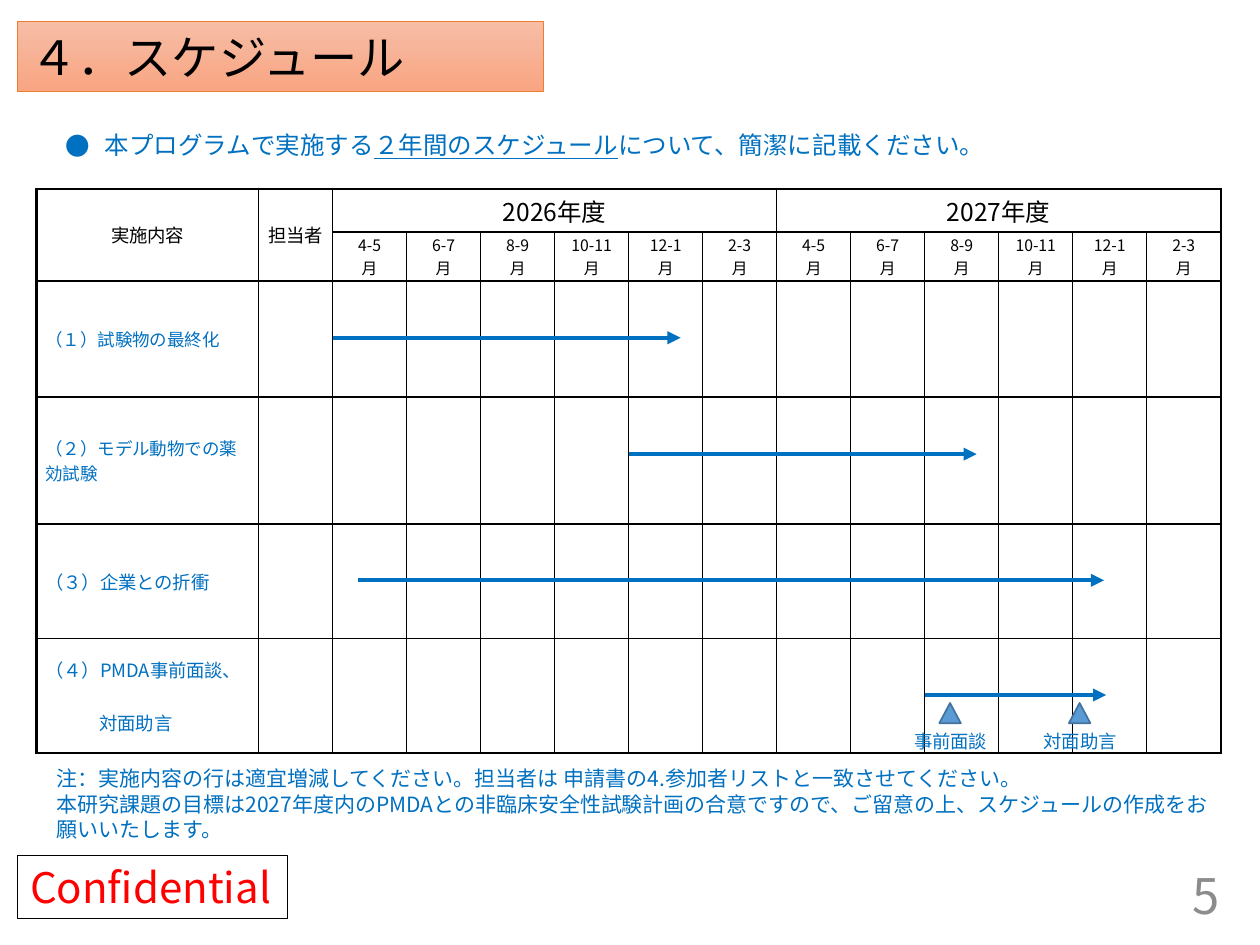
from itertools import accumulate

from lxml import etree
from pptx import Presentation
from pptx import util as u
from pptx.dml.color import RGBColor
from pptx.enum import shapes, text
from pptx.oxml import ns

# Content
TITLE = "４．スケジュール"
LEAD = [("本プログラムで実施する", False), ("２年間のスケジュール", True),
        ("について、簡潔に記載ください。", False)]
HEADS = ["実施内容", "担当者"]
YEARS = ["2026年度", "2027年度"]
MONTHS = ["4-5", "6-7", "8-9", "10-11", "12-1", "2-3"]
# Lines of each task, text size, arrow start and end in month columns, height in row
TASKS = [
    (["（１）試験物の最終化"], 10, 0, 4.7, 0.49),
    (["（２）モデル動物での薬効試験"], 10, 4, 8.7, 0.45),
    (["（３）企業との折衝"], 10.5, 0.34, 10.42, 0.49),
    (["（４）PMDA事前面談、", "対面助言"], 10.5, 8, 10.45, 0.49),
]
MILESTONES = [("事前面談", 8.35), ("対面助言", 10.1)]
NOTES = [
    "注：実施内容の行は適宜増減してください。担当者は 申請書の4.参加者リストと一致させてください。",
    "本研究課題の目標は2027年度内のPMDAとの非臨床安全性試験計画の合意ですので、"
    "ご留意の上、スケジュールの作成をお願いいたします。",
]

FONT = "Noto Sans CJK JP"
C = {"black": "000000", "blue": "0070C0", "red": "FF0000", "grey": "8C8C8C",
     "peach": "F7BDA5", "salmon": "F8A582", "orange": "ED7D31",
     "marker": "5B9BD5", "marker_edge": "43739E"}
AL, MID = text.PP_ALIGN, text.MSO_ANCHOR.MIDDLE

# Grid: the task column takes three units, every other column one
LEFT, TOP, WIDTH = 0.29, 1.5, 9.4
UNITS = [3] + [1] * 13
UNIT = WIDTH / sum(UNITS)
ROWS = [0.34, 0.39, 0.92, 1.01, 0.91, 0.91]
ROW_TOPS = list(accumulate(ROWS, initial=TOP))


def rgb(name):
    return RGBColor.from_string(C[name])


def month_x(n):
    return LEFT + (4 + n) * UNIT


def add_run(p, s, size=10.5, color="blue", underline=False):
    r = p.add_run()
    r.text = s
    r.font.size, r.font.name = u.Pt(size), FONT
    r.font.color.rgb = rgb(color)
    if underline:
        r.font.underline = True
    ea = etree.SubElement(r.font._element, ns.qn("a:ea"))
    ea.set("typeface", FONT)


def write(tf, lines, align=AL.LEFT, anchor=MID, wrap=True, pitch=None, **fmt):
    tf.word_wrap, tf.vertical_anchor = wrap, anchor
    for i, line in enumerate(lines):
        p = tf.paragraphs[0] if i == 0 else tf.add_paragraph()
        p.alignment = align
        if pitch:
            p.line_spacing = u.Pt(pitch)
        add_run(p, line, **fmt)


def place(sp, *box):
    sp.left, sp.top, sp.width, sp.height = map(u.Inches, box)


def add_text(s, box, lines, **fmt):
    sp = s.shapes.add_textbox(*map(u.Inches, box))
    write(sp.text_frame, lines, **fmt)
    return sp


def add_arrow(s, x1, x2, y):
    c = s.shapes.add_connector(shapes.MSO_CONNECTOR.STRAIGHT,
                               *map(u.Inches, (x1, y, x2, y)))
    c.line.color.rgb, c.line.width = rgb("blue"), u.Pt(2.5)
    spPr = c.element.spPr
    etree.SubElement(spPr.find(ns.qn("a:ln")), ns.qn("a:tailEnd")).set("type", "triangle")
    etree.SubElement(spPr, ns.qn("a:effectLst"))


def style_cell(cell, row, col):
    """Rule the cell, thicker at the table's edge and under the header."""
    heavy = {"L": col == 0, "R": col == len(UNITS) - 1,
             "T": row in (0, 2), "B": row in (1, len(ROWS) - 1)}
    tcPr = cell._tc.get_or_add_tcPr()
    for side, thick in heavy.items():
        ln = etree.SubElement(tcPr, ns.qn("a:ln" + side))
        ln.set("w", str(u.Pt(1.5 if thick else 1)))
        fill = etree.SubElement(ln, ns.qn("a:solidFill"))
        etree.SubElement(fill, ns.qn("a:srgbClr")).set("val", C["black"])
    cell.fill.background()
    cell.margin_left = cell.margin_right = u.Inches(0.07)
    cell.margin_top = cell.margin_bottom = 0


def add_schedule(s):
    box = map(u.Inches, (LEFT, TOP, WIDTH, sum(ROWS)))
    tbl = s.shapes.add_table(len(ROWS), len(UNITS), *box).table
    tbl.first_row = tbl.horz_banding = False
    for column, n in zip(tbl.columns, UNITS):
        column.width = u.Inches(n * UNIT)
    for row, h in zip(tbl.rows, ROWS):
        row.height = u.Inches(h)
    for i in range(len(ROWS)):
        for j in range(len(UNITS)):
            style_cell(tbl.cell(i, j), i, j)

    def fill(row, col, lines, align=AL.CENTER, color="black", **fmt):
        cell = tbl.cell(row, col)
        cell.vertical_anchor = MID
        for i, line in enumerate(lines):
            tf = cell.text_frame
            p = tf.paragraphs[0] if i == 0 else tf.add_paragraph()
            p.alignment = align
            add_run(p, line, color=color, **fmt)
        return cell

    for col, head in enumerate(HEADS):
        tbl.cell(0, col).merge(tbl.cell(1, col))
        fill(0, col, [head])
    for k, year in enumerate(YEARS):
        first = len(HEADS) + k * len(MONTHS)
        tbl.cell(0, first).merge(tbl.cell(0, first + len(MONTHS) - 1))
        fill(0, first, [year], size=14)
        for m, month in enumerate(MONTHS):
            fill(1, first + m, [month, "月"], size=9)
    for row, (lines, size, *_) in enumerate(TASKS, 2):
        cell = fill(row, 0, lines, align=AL.LEFT, color="blue", size=size)
        for p in cell.text_frame.paragraphs[1:]:
            p.space_before = u.Pt(15)
            p._p.get_or_add_pPr().set("marL", str(u.Inches(0.43)))


prs = Presentation()
prs.slide_width, prs.slide_height = u.Inches(10), u.Inches(7.5)
s = prs.slides.add_slide(prs.slide_layouts[1])

# Title band
title, body = s.placeholders
place(title, 0.14, 0.17, 4.17, 0.56)
title.fill.gradient()
title.fill.gradient_angle = 270
for stop, name in zip(title.fill.gradient_stops, ("peach", "salmon")):
    stop.color.rgb = rgb(name)
title.line.color.rgb, title.line.width = rgb("orange"), u.Pt(0.5)
title.text_frame.auto_size = text.MSO_AUTO_SIZE.NONE
write(title.text_frame, [TITLE], size=27, color="black")

# Lead bullet
place(body, 0.42, 0.98, 9.43, 0.34)
tf = body.text_frame
tf.auto_size, tf.vertical_anchor = text.MSO_AUTO_SIZE.NONE, MID
tf.margin_top = tf.margin_bottom = 0
p = tf.paragraphs[0]
p.space_before = 0
pPr = p._p.get_or_add_pPr()
pPr.set("marL", str(u.Inches(0.31)))
pPr.set("indent", str(-u.Inches(0.31)))
etree.SubElement(pPr, ns.qn("a:buFont")).set("typeface", FONT)
etree.SubElement(pPr, ns.qn("a:buChar")).set("char", "●")
for part, underline in LEAD:
    add_run(p, part, size=14, underline=underline)

# Schedule table and task arrows
add_schedule(s)
for row, (_, _, start, end, share) in enumerate(TASKS, 2):
    add_arrow(s, month_x(start), month_x(end), ROW_TOPS[row] + share * ROWS[row])

# Milestones
for label, n in MILESTONES:
    x = month_x(n)
    sp = s.shapes.add_shape(shapes.MSO_SHAPE.FLOWCHART_EXTRACT,
                            *map(u.Inches, (x - 0.09, 5.58, 0.17, 0.16)))
    sp.shadow.inherit = False
    sp.fill.solid()
    sp.fill.fore_color.rgb = rgb("marker")
    sp.line.color.rgb, sp.line.width = rgb("marker_edge"), u.Pt(1)
    add_text(s, (x - 0.4, 5.74, 0.8, 0.28), [label], align=AL.CENTER, wrap=False)

# Notes, confidentiality mark and page number
add_text(s, (0.35, 6.03, 9.34, 0.71), NOTES, size=12, pitch=14.4,
         anchor=text.MSO_ANCHOR.TOP)
mark = add_text(s, (0.14, 6.79, 2.14, 0.5), ["Confidential"], size=24,
                color="red", wrap=False)
mark.line.color.rgb, mark.line.width = rgb("black"), u.Pt(0.75)
add_text(s, (7.53, 6.9, 2.25, 0.4), ["5"], size=28, color="grey", align=AL.RIGHT)

prs.save("out.pptx")
